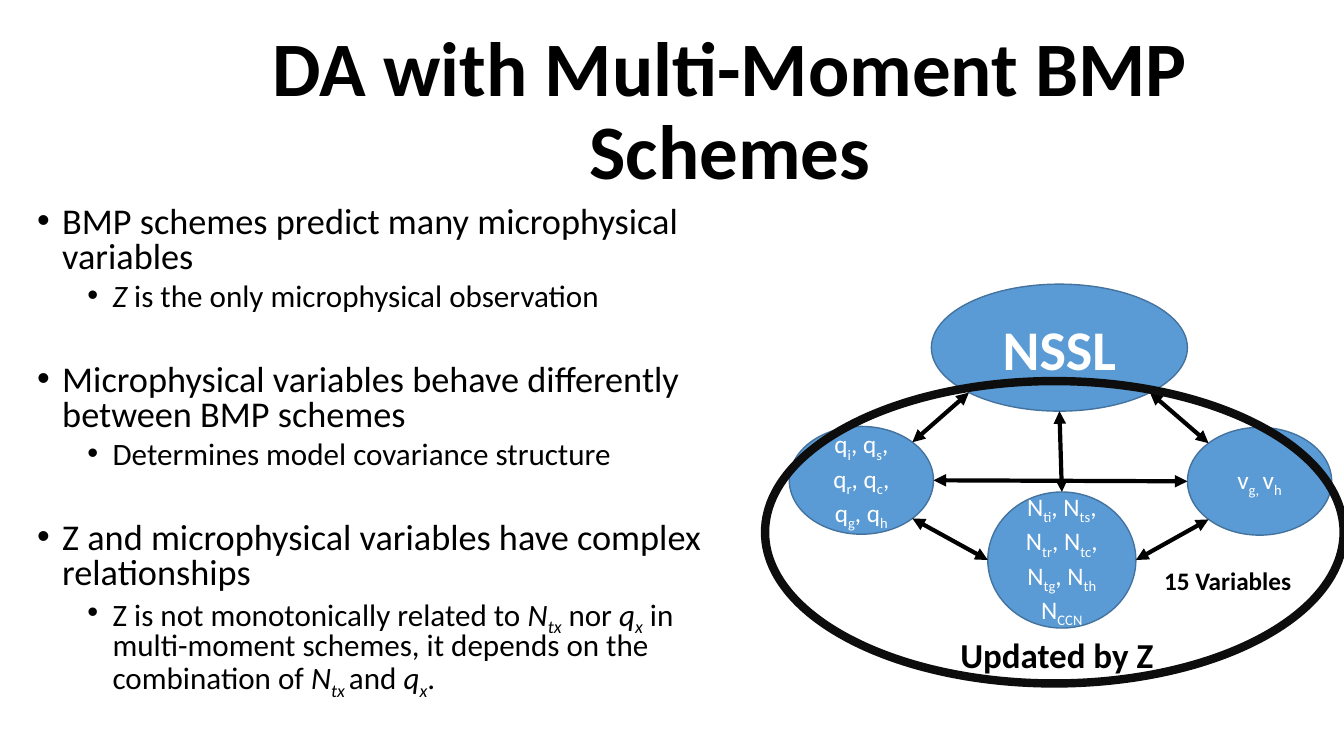
"""Build the slide on data assimilation with multi-moment BMP schemes."""
import dataclasses
import math

import lxml.etree
import pptx
import pptx.dml.color
import pptx.enum.shapes
import pptx.enum.text
import pptx.oxml.ns
import pptx.util

Pt = pptx.util.Pt
ALIGN = pptx.enum.text.PP_ALIGN
ANCHOR = pptx.enum.text.MSO_ANCHOR
OVAL = pptx.enum.shapes.MSO_SHAPE.OVAL

TITLE = "DA with Multi-Moment BMP Schemes"
POINTS = [
    ("BMP schemes predict many microphysical variables",
     "*Z* is the only microphysical observation"),
    ("Microphysical variables behave differently between BMP schemes",
     "Determines model covariance structure"),
    ("Z and microphysical variables have complex relationships",
     "Z is not monotonically related to *N~tx~* nor *q~x~* in multi-moment schemes, "
     "it depends on the combination of *N~tx ~*and *q~x~*."),
]
VARIABLE_GROUPS = {
    "scheme": (["NSSL"], (665.3, 203, 182.9, 90.7)),
    "mass": (["q~i~, q~s~, q~r~, q~c~, q~g~, q~h~"], (563.8, 304.6, 103, 77)),
    "number": (["N~ti~, N~ts~, N~tr~, N~tc~, N~tg~, N~th~", "N~CCN~"],
               (705.6, 351.4, 105.8, 97.2)),
    "volume": (["v~g, ~v~h~"], (848.2, 305.3, 103, 77)),
}
LINKS = [
    ("scheme", (-1, 1), "mass", (1, -1)),
    ("scheme", (0, 1), "number", (0, -1)),
    ("scheme", (1, 1), "volume", (-1, -1)),
    ("number", (-1, 0), "mass", (1, 1)),
    ("volume", (-1, 0), "mass", (1, 0)),
    ("volume", (-1, 1), "number", (1, 0)),
]
TITLE_BOX = (82.8, 28.8, 877.2, 104.4)
POINTS_BOX = (19.4, 144, 491.8, 363.6)
UPDATE_RING = (546.5, 272.2, 413.3, 216)
UPDATE_CAPTION = ("Updated by Z", (667.4, 448.6, 175, 37.4))
COUNT_CAPTION = ("15 Variables", (824.4, 400.3, 107.3, 28.8))


@dataclasses.dataclass(frozen=True)
class Theme:
    """Colours, font and sizes."""
    font: str = "Calibri"
    ink: str = "000000"
    paper: str = "FFFFFF"
    oval: str = "5B9BD5"
    oval_edge: str = "43739E"
    ring: str = "0D0D0D"
    title: float = 55
    point: float = 25.9
    detail: float = 22.2
    scheme: float = 40
    update: float = 25
    label: float = 18


THEME = Theme()


def rgb(code):
    """Turn a hex code into a colour."""
    return pptx.dml.color.RGBColor.from_string(code)


def add_xml(parent, tag, **attributes):
    """Append a drawing element to its parent."""
    return lxml.etree.SubElement(parent, pptx.oxml.ns.qn(tag), attributes)


def write(frame, text, size, color=THEME.ink, bold=False, align=ALIGN.LEFT,
          spacing=None, before=None, indent=None):
    """Add a paragraph where ~ toggles subscript and * toggles italics."""
    paragraph = frame.paragraphs[0]
    if paragraph.runs:
        paragraph = frame.add_paragraph()
    if indent is not None:
        properties = paragraph._p.get_or_add_pPr()
        properties.set("marL", str(Pt(indent)))
        properties.set("indent", str(Pt(-18)))
        add_xml(properties, "a:buFont", typeface="Arial")
        add_xml(properties, "a:buChar", char="•")
    paragraph.alignment = align
    paragraph.line_spacing = spacing
    if before is not None:
        paragraph.space_before = Pt(before)
    italic = False
    for level, part in enumerate(text.split("~")):
        for turn, piece in enumerate(part.split("*")):
            italic = italic != (turn > 0)
            if not piece:
                continue
            run = paragraph.add_run()
            run.text = piece
            run.font.name = THEME.font
            run.font.size = Pt(size)
            run.font.bold = bold
            run.font.italic = italic
            run.font.color.rgb = rgb(color)
            if level % 2:
                run.font._element.set("baseline", "-25000")


def add_oval(slide, box, edge, width, fill=None):
    """Add an ellipse, hollow when no fill is given."""
    oval = slide.shapes.add_shape(OVAL, *map(Pt, box))
    oval.shadow.inherit = False
    if fill:
        oval.fill.solid()
        oval.fill.fore_color.rgb = rgb(fill)
    else:
        oval.fill.background()
    oval.line.color.rgb = rgb(edge)
    oval.line.width = Pt(width)
    return oval


def add_text_box(slide, box, wrap=True):
    """Add an empty text box and return its frame."""
    frame = slide.shapes.add_textbox(*map(Pt, box)).text_frame
    frame.word_wrap = wrap
    return frame


def rim_point(box, direction):
    """Find where a direction from the centre meets an ellipse."""
    left, top, width, height = box
    reach = 2 * math.hypot(*direction)
    return (left + width / 2 + direction[0] * width / reach,
            top + height / 2 + direction[1] * height / reach)


def add_link(slide, start, end):
    """Add a double-headed arrow."""
    link = slide.shapes.add_connector(
        pptx.enum.shapes.MSO_CONNECTOR.STRAIGHT, *map(Pt, start + end))
    link.line.color.rgb = rgb(THEME.ink)
    link.line.width = Pt(3)
    for tag in ("a:headEnd", "a:tailEnd"):
        add_xml(link.line._get_or_add_ln(), tag, type="triangle")
    add_xml(link._element.spPr, "a:effectLst")


def main():
    """Compose and save the slide."""
    deck = pptx.Presentation()
    deck.slide_width, deck.slide_height = Pt(960), Pt(540)
    slide = deck.slides.add_slide(deck.slide_layouts[5])

    title = slide.shapes.title
    title.left, title.top, title.width, title.height = map(Pt, TITLE_BOX)
    title.text_frame.vertical_anchor = ANCHOR.MIDDLE
    title.text_frame.auto_size = pptx.enum.text.MSO_AUTO_SIZE.NONE
    write(title.text_frame, TITLE, THEME.title, bold=True,
          align=ALIGN.CENTER, spacing=0.9)

    points = add_text_box(slide, POINTS_BOX)
    for order, (point, detail) in enumerate(POINTS):
        write(points, point, THEME.point, spacing=0.8,
              before=36.7 if order else 0, indent=18)
        write(points, detail, THEME.detail, spacing=0.8, before=5, indent=54)

    for group, (lines, box) in VARIABLE_GROUPS.items():
        is_scheme = group == "scheme"
        frame = add_oval(slide, box, THEME.oval_edge, 1, THEME.oval).text_frame
        frame.word_wrap = True
        frame.vertical_anchor = ANCHOR.MIDDLE
        for line in lines:
            write(frame, line, THEME.scheme if is_scheme else THEME.label,
                  color=THEME.paper, bold=is_scheme, align=ALIGN.CENTER)

    for source, leaving, target, arriving in LINKS:
        add_link(slide, rim_point(VARIABLE_GROUPS[source][1], leaving),
                 rim_point(VARIABLE_GROUPS[target][1], arriving))

    add_oval(slide, UPDATE_RING, THEME.ring, 6)
    caption, box = UPDATE_CAPTION
    write(add_text_box(slide, box), caption, THEME.update, bold=True, align=ALIGN.CENTER)
    caption, box = COUNT_CAPTION
    write(add_text_box(slide, box, wrap=False), caption, THEME.label, bold=True)

    deck.save("out.pptx")


if __name__ == "__main__":
    main()
